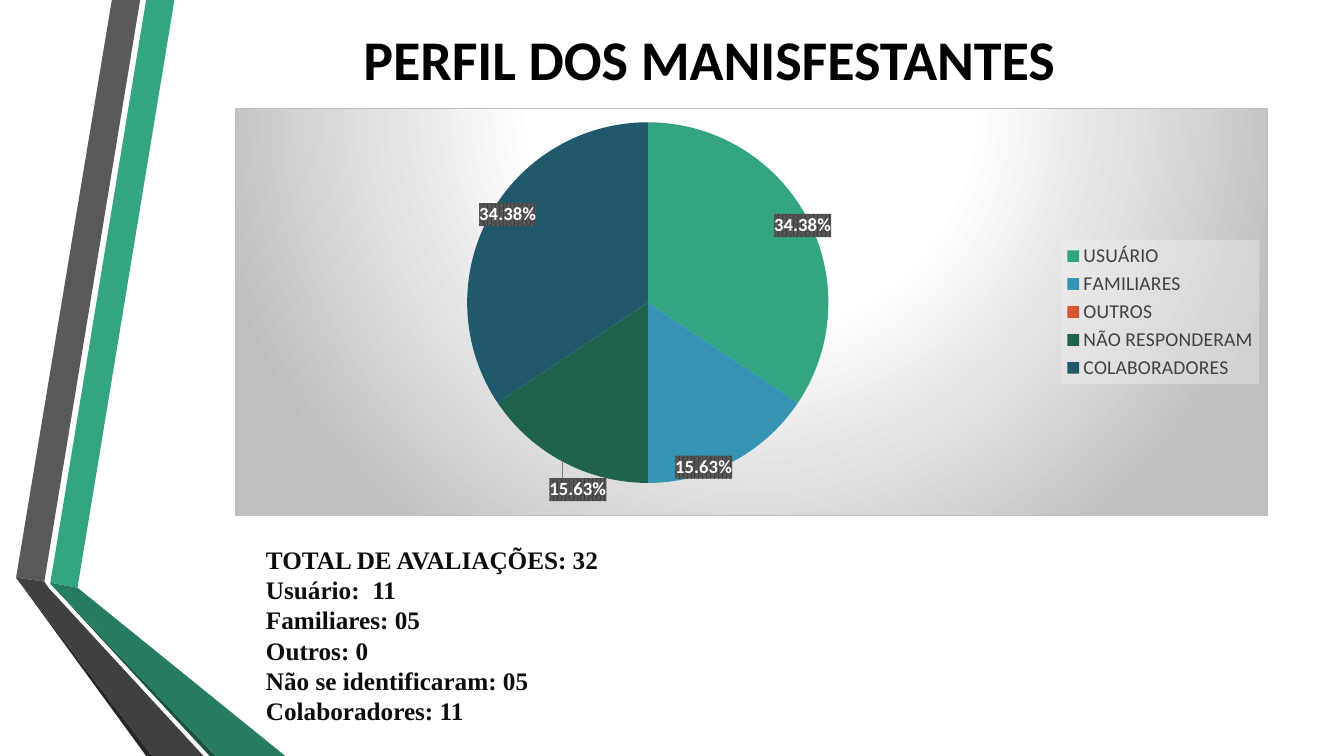
import pptx
import pptx.chart.data
import pptx.dml.color
import pptx.enum.chart
import pptx.enum.text
import pptx.oxml
import pptx.oxml.ns
import pptx.util

THEME = {
    "title": ("Calibri", 40, "000000"),
    "summary": ("Times New Roman", 18, "0D0D0D"),
    "legend": ("Calibri", 14, "404040"),
    "label": ("Calibri", 13.3, "FFFFFF"),
    "label_fill": ("404040", "595959"),
    "leader": "7F7F7F",
    "legend_fill": "F2F2F2",
    "chart_fill": ((0, "FFFFFF"), (39, "FFFFFF"), (100, "BFBFBF")),
    "chart_border": "BFBFBF",
}
TITLE = "PERFIL DOS MANISFESTANTES "
SUMMARY = [
    "TOTAL DE AVALIAÇÕES: 32",
    "Usuário:  11",
    "Familiares: 05",
    "Outros: 0",
    "Não se identificaram: 05",
    "Colaboradores: 11",
]
PROFILES = [
    ("USUÁRIO", 34.38, "33A583"),
    ("FAMILIARES", 15.63, "3594B4"),
    ("OUTROS", 0, "D35731"),
    ("NÃO RESPONDERAM", 15.63, "1F634F"),
    ("COLABORADORES", 34.38, "20596C"),
]
LABEL_OFFSETS = {0: (53.8, -24.8), 1: (9.5, 60.9), 3: (-19.6, 77), 4: (-43.2, -32.6)}
BANDS = [
    ("33A583", [(36, 416.2), (55.4, 419.8), (124.6, 0), (104.4, 0)]),
    ("595959", [(100.1, 0), (79.9, 0), (11.5, 412.6), (31.7, 415.4)]),
    ("262626", [(11.5, 412.6), (104.4, 540), (108.7, 540)]),
    ("1A5242", [(36, 416.9), (149.8, 540), (154.1, 540)]),
    ("267C62", [(36, 416.2), (36, 416.9), (154.1, 540), (203.8, 540), (55.4, 419.8)]),
    ("404040", [(145.4, 540), (34.6, 419.8), (31.7, 415.4), (11.5, 412.6), (108.7, 540)]),
]
TITLE_BOX = (116.6, 6.5, 789.1, 70.6)
CHART_BOX = (167.8, 77, 738, 291.6)
SUMMARY_BOX = (182.9, 385.2, 286.6, 203.8)
PIE_BOX = (165.7, 9.9, 258.3, 258.6)
LEGEND_BOX = (590.4, 94.5, 141.7, 102.9)
NAMESPACES = pptx.oxml.ns.nsdecls("c", "a")


def points(values):
    return [pptx.util.Pt(value) for value in values]


def colour(code):
    return pptx.dml.color.RGBColor.from_string(code)


def style_font(font, role):
    name, size, code = THEME[role]
    font.name, font.size = name, pptx.util.Pt(size)
    font.color.rgb = colour(code)


def add_text(slide, box, lines, role, alignment):
    shape = slide.shapes.add_textbox(*points(box))
    frame = shape.text_frame
    frame.word_wrap = True
    for index, line in enumerate(lines):
        paragraph = frame.add_paragraph() if index else frame.paragraphs[0]
        paragraph.alignment = alignment
        run = paragraph.add_run()
        run.text = line
        style_font(run.font, role)
        run.font.bold = True
    return frame


def add_bands(slide):
    group = slide.shapes.add_group_shape()
    for code, corners in BANDS:
        start, *rest = [points(corner) for corner in corners]
        builder = group.shapes.build_freeform(*start, scale=1.0)
        builder.add_line_segments(rest, close=True)
        shape = builder.convert_to_shape()
        shape.shadow.inherit = False
        shape.fill.solid()
        shape.fill.fore_color.rgb = colour(code)
        shape.line.fill.background()


def element(xml, tag):
    return pptx.oxml.parse_xml(f"<{tag} {NAMESPACES}>{xml}</{tag}>")


def solid(code, alpha=100):
    return f'<a:solidFill><a:srgbClr val="{code}"><a:alpha val="{alpha * 1000}"/></a:srgbClr></a:solidFill>'


def manual_layout(box, target=""):
    sides = "".join(
        f'<c:{name} val="{value / whole}"/>'
        for name, value, whole in zip("xywh", box, CHART_BOX[2:] * 2)
    )
    modes = '<c:xMode val="edge"/><c:yMode val="edge"/>' if len(box) == 4 else ""
    return f"<c:manualLayout>{target}{modes}{sides}</c:manualLayout>"


def replace_layout(parent, position, xml):
    for old in parent.findall(pptx.oxml.ns.qn("c:layout")):
        parent.remove(old)
    parent.insert(position, element(xml, "c:layout"))


def pie_labels():
    name, size, code = THEME["label"]
    front, back = THEME["label_fill"]
    shows = "".join(
        f'<c:show{part} val="{int(part == "Val")}"/>'
        for part in ("LegendKey", "Val", "CatName", "SerName", "Percent", "BubbleSize")
    )
    style = (
        '<c:numFmt formatCode="0.00&quot;%&quot;" sourceLinked="0"/>'
        f'<c:spPr><a:pattFill prst="pct75"><a:fgClr><a:srgbClr val="{front}"/></a:fgClr>'
        f'<a:bgClr><a:srgbClr val="{back}"/></a:bgClr></a:pattFill></c:spPr>'
        f'<c:txPr><a:bodyPr/><a:p><a:pPr><a:defRPr sz="{round(size * 100)}" b="1">{solid(code)}'
        f'<a:latin typeface="{name}"/></a:defRPr></a:pPr></a:p></c:txPr>'
        f'<c:dLblPos val="ctr"/>{shows}'
    )
    labels = "".join(
        f'<c:dLbl><c:idx val="{index}"/><c:layout>{manual_layout(offset)}</c:layout>{style}</c:dLbl>'
        for index, offset in LABEL_OFFSETS.items()
    )
    leader = (
        '<c:showLeaderLines val="1"/><c:leaderLines><c:spPr>'
        f'<a:ln w="9525">{solid(THEME["leader"])}</a:ln></c:spPr></c:leaderLines>'
    )
    return element(labels + style + leader, "c:dLbls")


def add_pie(slide):
    data = pptx.chart.data.CategoryChartData()
    data.categories = [name for name, _, _ in PROFILES]
    data.add_series("Series 1", [share for _, share, _ in PROFILES])
    chart = slide.shapes.add_chart(
        pptx.enum.chart.XL_CHART_TYPE.PIE, *points(CHART_BOX), data
    ).chart
    chart.has_title = False
    chart.font.name, chart.font.size = "Calibri", pptx.util.Pt(10)
    plot = chart.plots[0]
    plot.vary_by_categories = True
    series = plot.series[0]
    for index, (_, _, code) in enumerate(PROFILES):
        fill = series.points[index].format.fill
        fill.solid()
        fill.fore_color.rgb = colour(code)
    root = chart.element
    root.find(".//" + pptx.oxml.ns.qn("c:cat")).addprevious(pie_labels())
    area = root.find(".//" + pptx.oxml.ns.qn("c:plotArea"))
    replace_layout(area, 0, manual_layout(PIE_BOX, '<c:layoutTarget val="inner"/>'))

    chart.has_legend = True
    legend = chart.legend
    legend.position = pptx.enum.chart.XL_LEGEND_POSITION.RIGHT
    legend.include_in_layout = False
    style_font(legend.font, "legend")
    legend_root = root.find(".//" + pptx.oxml.ns.qn("c:legend"))
    replace_layout(legend_root, 1, manual_layout(LEGEND_BOX))
    legend_text = legend_root.find(pptx.oxml.ns.qn("c:txPr"))
    legend_text.addprevious(element(solid(THEME["legend_fill"], 39), "c:spPr"))

    stops = "".join(
        f'<a:gs pos="{place * 1000}"><a:srgbClr val="{code}"/></a:gs>'
        for place, code in THEME["chart_fill"]
    )
    background = (
        f'<a:gradFill><a:gsLst>{stops}</a:gsLst><a:path path="circle">'
        '<a:fillToRect l="50000" t="-80000" r="50000" b="180000"/></a:path></a:gradFill>'
        f'<a:ln w="9525">{solid(THEME["chart_border"])}</a:ln>'
    )
    root.find(pptx.oxml.ns.qn("c:chart")).addnext(element(background, "c:spPr"))


def main():
    presentation = pptx.Presentation()
    presentation.slide_width, presentation.slide_height = points((960, 540))
    slide = presentation.slides.add_slide(presentation.slide_layouts[6])
    add_bands(slide)
    title = add_text(slide, TITLE_BOX, [TITLE], "title", pptx.enum.text.PP_ALIGN.CENTER)
    title.vertical_anchor = pptx.enum.text.MSO_ANCHOR.MIDDLE
    add_pie(slide)
    summary = add_text(slide, SUMMARY_BOX, SUMMARY, "summary", pptx.enum.text.PP_ALIGN.LEFT)
    summary.auto_size = pptx.enum.text.MSO_AUTO_SIZE.SHAPE_TO_FIT_TEXT
    presentation.save("out.pptx")


if __name__ == "__main__":
    main()
